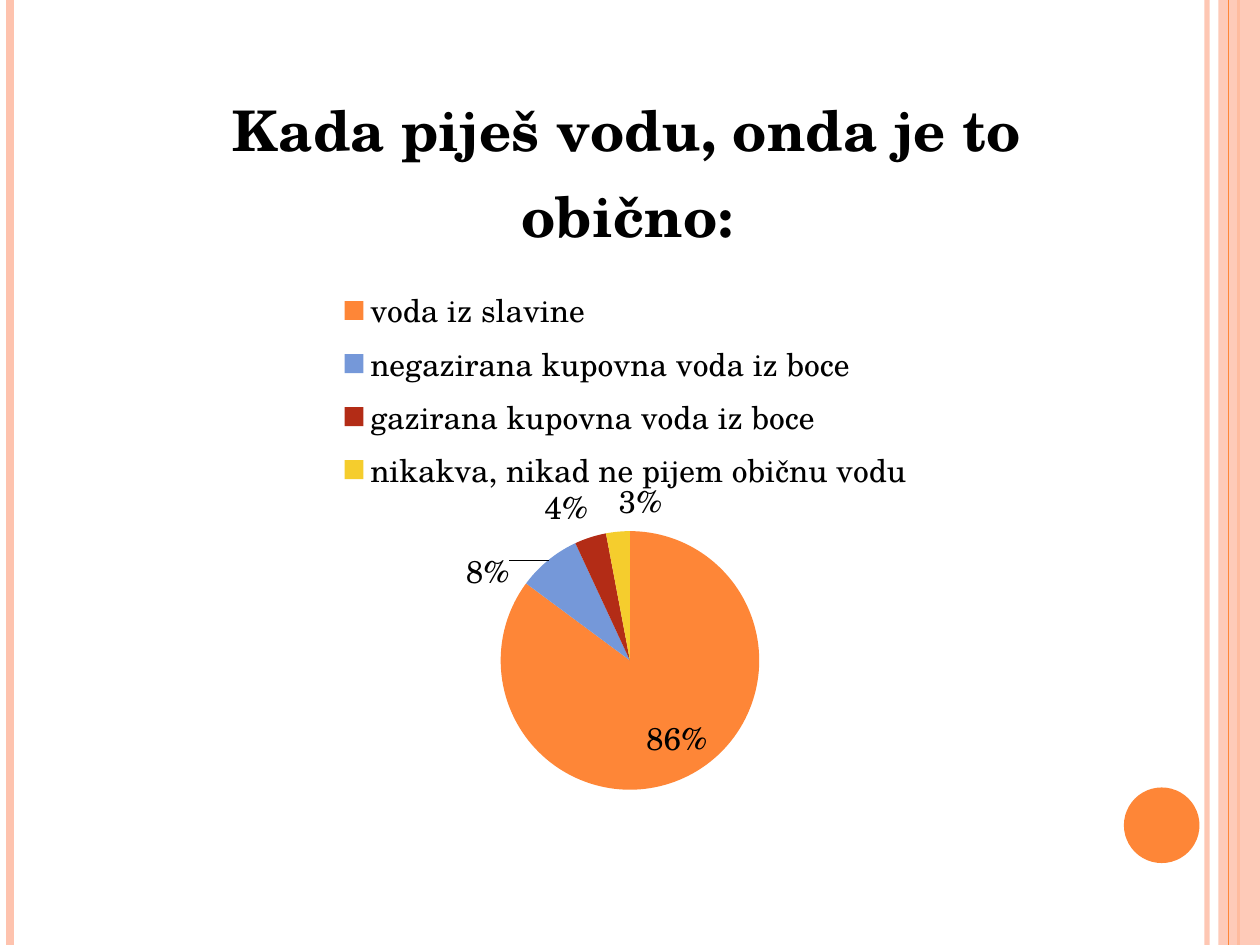
from dataclasses import dataclass

from lxml import etree
from pptx import Presentation
from pptx.chart import data as chart_data
from pptx.dml.color import RGBColor
from pptx.enum import chart as chart_enum, shapes
from pptx.oxml import ns, parse_xml
from pptx.util import Inches, Pt


@dataclass(frozen=True)
class Theme:
    font: str = "TeX Gyre Schola"
    ink: str = "000000"
    accent: str = "FE8637"
    pale: str = "FEC3AE"
    slices: tuple = ("FE8637", "7598D9", "B32C16", "F5CD2D")
    title_size: int = 32
    text_size: int = 18


THEME = Theme()
QUESTION = "Kada piješ vodu, onda je to obično:"
ANSWERS = {
    "voda iz slavine": 86,
    "negazirana kupovna voda iz boce": 8,
    "gazirana kupovna voda iz boce": 4,
    "nikakva, nikad ne pijem običnu vodu ": 3,
}
PERCENT_FORMAT = '0"%"'
INSIDE = chart_enum.XL_LABEL_POSITION.INSIDE_END
OUTSIDE = chart_enum.XL_LABEL_POSITION.OUTSIDE_END
# Position of each slice's label and its shift as a share of the chart
LABELS = ((INSIDE, (0.02, -0.01)), (OUTSIDE, (-0.03, 0.05)),
          (OUTSIDE, None), (OUTSIDE, (0.04, 0)))


def set_alpha(fill_parent, percent):
    color = fill_parent.find(".//" + ns.qn("a:srgbClr"))
    etree.SubElement(color, ns.qn("a:alpha"), val=str(percent * 1000))


def add_stripe(page, x, color, width, alpha=100):
    """Add a vertical line over the full height of the page."""
    line = page.shapes.add_connector(
        shapes.MSO_CONNECTOR.STRAIGHT, Inches(x), 0, Inches(x), Inches(7.5))
    line.line.color.rgb = RGBColor.from_string(color)
    line.line.width = Pt(width)
    properties = line._element.spPr
    if alpha < 100:
        set_alpha(properties, alpha)
    etree.SubElement(properties, ns.qn("a:effectLst"))


def add_plain_shape(page, kind, place, color, alpha=100):
    shape = page.shapes.add_shape(kind, *map(Inches, place))
    shape.shadow.inherit = False
    shape.fill.solid()
    shape.fill.fore_color.rgb = RGBColor.from_string(color)
    shape.line.fill.background()
    if alpha < 100:
        set_alpha(shape._element.spPr, alpha)


def format_font(font, size, bold=False):
    values = {"name": THEME.font, "size": Pt(size), "bold": bold}
    for name, value in values.items():
        setattr(font, name, value)
    font.color.rgb = RGBColor.from_string(THEME.ink)


def make_layout(mode=None, target=None, **shares):
    """Build a manual layout; shares are x, y, w and h of the chart."""
    parts = [("layoutTarget", target)] if target else []
    if mode:
        parts += [("xMode", mode), ("yMode", mode)]
    parts += shares.items()
    inner = "".join(f'<c:{name} val="{value}"/>' for name, value in parts)
    return parse_xml(f'<c:layout {ns.nsdecls("c")}><c:manualLayout>{inner}'
                     "</c:manualLayout></c:layout>")


def place_after(element, tag, layout):
    """Put the layout behind the named child, in place of an older one."""
    for old in element.findall(ns.qn("c:layout")):
        element.remove(old)
    element.find(ns.qn(tag)).addnext(layout)


def label_slice(point, position, shift):
    label = point.data_label
    format_font(label.font, THEME.text_size)
    label.position = position
    element = label._dLbl
    number_format = parse_xml(f'<c:numFmt {ns.nsdecls("c")} sourceLinked="0"/>')
    number_format.set("formatCode", PERCENT_FORMAT)
    element.find(ns.qn("c:idx")).addnext(number_format)
    if shift:
        place_after(element, "c:idx", make_layout(x=shift[0], y=shift[1]))


def format_slices(series):
    labels = series.data_labels
    values = {"show_value": True, "number_format": PERCENT_FORMAT,
              "number_format_is_linked": False}
    for name, value in values.items():
        setattr(labels, name, value)
    format_font(labels.font, THEME.text_size)
    for index, (color, label) in enumerate(zip(THEME.slices, LABELS)):
        point = series.points[index]
        point.format.fill.solid()
        point.format.fill.fore_color.rgb = RGBColor.from_string(color)
        label_slice(point, *label)


def add_answer_chart(page):
    data = chart_data.CategoryChartData()
    data.categories = ANSWERS.keys()
    data.add_series(QUESTION, ANSWERS.values())
    place = map(Inches, (0.51, 0.36, 8.98, 6.22))
    chart = page.shapes.add_chart(
        chart_enum.XL_CHART_TYPE.PIE, *place, data).chart
    format_font(chart.font, THEME.text_size)

    chart.has_title = True
    frame = chart.chart_title.text_frame
    frame.text = QUESTION
    format_font(frame.paragraphs[0].runs[0].font, THEME.title_size, bold=True)
    place_after(chart.chart_title._element, "c:tx",
                make_layout("edge", x=0.14, y=0.03))

    chart.has_legend = True
    legend = chart.legend
    legend.position = chart_enum.XL_LEGEND_POSITION.TOP
    legend.include_in_layout = False
    format_font(legend.font, THEME.text_size)
    place_after(legend._element, "c:legendPos",
                make_layout("edge", x=0.24, y=0.3, w=0.52, h=0.28))

    plot_area = chart._chartSpace.chart.plotArea
    for old in plot_area.findall(ns.qn("c:layout")):
        plot_area.remove(old)
    plot_area.insert(0, make_layout(
        "edge", "inner", x=0.08, y=0.62, w=0.84, h=0.33))
    format_slices(chart.plots[0].series[0])


def add_page_edges(page):
    add_stripe(page, 9.58, THEME.pale, 3, alpha=93)
    add_stripe(page, 0.08, THEME.pale, 4.5)
    add_stripe(page, 9.83, THEME.accent, 1.5)
    add_plain_shape(page, shapes.MSO_SHAPE.RECTANGLE,
                    (9.67, 0, 0.33, 7.5), THEME.pale, alpha=87)
    add_stripe(page, 9.75, THEME.accent, 0.75)
    add_plain_shape(page, shapes.MSO_SHAPE.OVAL,
                    (8.92, 6.25, 0.6, 0.6), THEME.accent)


def main():
    deck = Presentation()
    deck.slide_width, deck.slide_height = Inches(10), Inches(7.5)
    page = deck.slides.add_slide(deck.slide_layouts[6])
    add_page_edges(page)
    add_answer_chart(page)
    deck.save("out.pptx")


if __name__ == "__main__":
    main()
